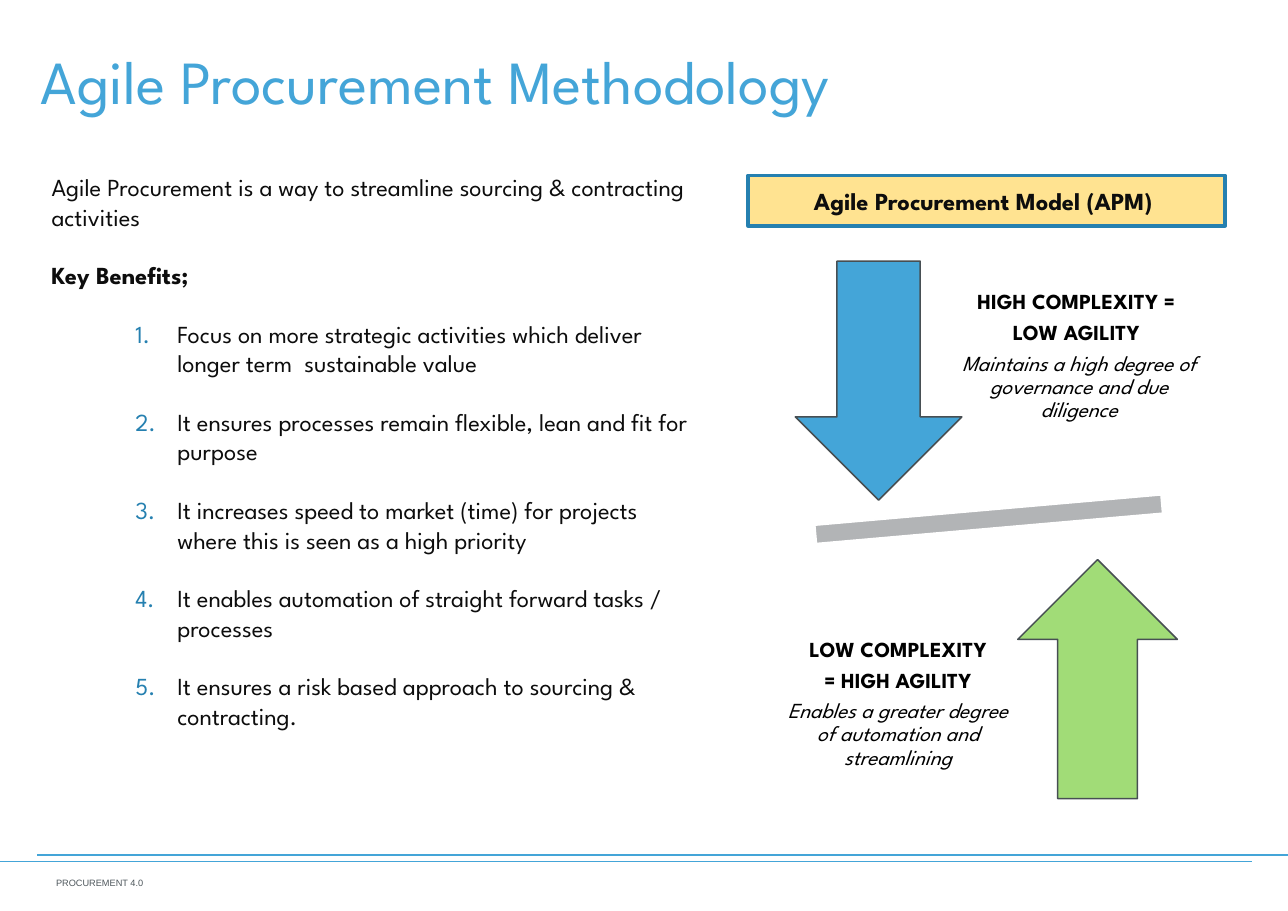
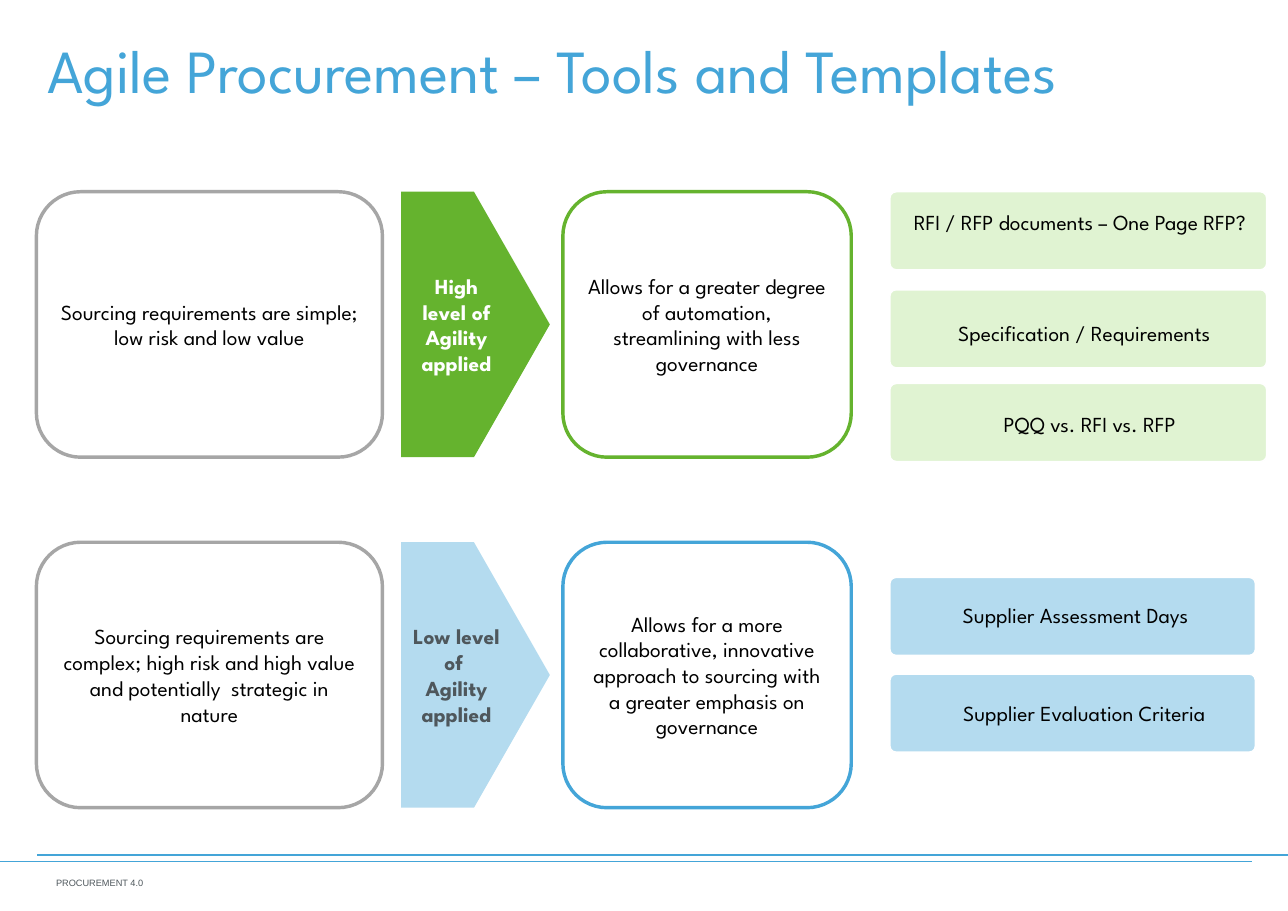
"""Build two slides on agile procurement: the model, and its tools and templates."""
from lxml.etree import SubElement
from pptx import Presentation
from pptx.dml.color import RGBColor
from pptx.enum.shapes import MSO_CONNECTOR, MSO_SHAPE as Kind
from pptx.enum.text import MSO_ANCHOR as Anchor, PP_ALIGN as Align
from pptx.oxml.ns import qn
from pptx.util import Cm, Pt

FONT = "League Spartan"
WHITE = RGBColor(0xFF, 0xFF, 0xFF)
BLACK = RGBColor(0x00, 0x00, 0x00)
INK = RGBColor(0x0D, 0x0D, 0x0D)
SLATE = RGBColor(0x4E, 0x57, 0x5C)
EDGE = RGBColor(0x47, 0x4F, 0x53)
GREY = RGBColor(0xA6, 0xA6, 0xA6)
SILVER = RGBColor(0xB2, 0xB4, 0xB6)
BLUE = RGBColor(0x44, 0xA5, 0xD8)
NAVY = RGBColor(0x25, 0x80, 0xB0)
SKY = RGBColor(0xB4, 0xDB, 0xEF)
GREEN = RGBColor(0x65, 0xB3, 0x2E)
LIME = RGBColor(0xA1, 0xDC, 0x77)
MINT = RGBColor(0xE0, 0xF3, 0xD2)
YELLOW = RGBColor(0xFF, 0xE3, 0x91)


def draw(slide, kind, box, fill=None, line=None, width=1, inset=(0.25, 0.13), anchor=Anchor.MIDDLE):
    """Add a shape, or a text box when kind is None, at box in centimetres."""
    place = [Cm(n) for n in box]
    if kind is None:
        shape = slide.shapes.add_textbox(*place)
    else:
        shape = slide.shapes.add_shape(kind, *place)
        shape.shadow.inherit = False
        if fill is None:
            shape.fill.background()
        else:
            shape.fill.solid()
            shape.fill.fore_color.rgb = fill
        if line is None:
            shape.line.fill.background()
        else:
            shape.line.color.rgb = line
            shape.line.width = Pt(width)
    frame = shape.text_frame
    frame.word_wrap = True
    frame.vertical_anchor = anchor
    frame.margin_left = frame.margin_right = Cm(inset[0])
    frame.margin_top = frame.margin_bottom = Cm(inset[1])
    return shape


def say(shape, text, size=14, color=BLACK, bold=False, italic=False, font=FONT,
        align=Align.CENTER, before=0, after=0, lead=None, number=False):
    """Add one paragraph to a shape."""
    frame = shape.text_frame
    para = frame.add_paragraph() if frame.text else frame.paragraphs[0]
    para.alignment = align
    para.space_before, para.space_after = Pt(before), Pt(after)
    if lead:
        para.line_spacing = lead
    if number:
        props = para._p.get_or_add_pPr()
        props.set("marL", str(Cm(2.9)))
        props.set("indent", str(-Cm(0.97)))
        tint = SubElement(props, qn("a:buClr"))
        SubElement(tint, qn("a:srgbClr")).set("val", str(NAVY))
        SubElement(props, qn("a:buFont")).set("typeface", FONT)
        SubElement(props, qn("a:buAutoNum")).set("type", "arabicPeriod")
    run = para.add_run()
    run.text = text
    run.font.name, run.font.size = font, Pt(size)
    run.font.bold, run.font.italic = bold, italic
    run.font.color.rgb = color


deck = Presentation()
deck.slide_width, deck.slide_height = Cm(29.7), Cm(21)

slides = []
for title, box in [
    ("Agile Procurement Methodology", (0.69, 0.86, 28.9, 0.91)),
    ("Agile Procurement – Tools and Templates", (0.84, 0.61, 27.91, 2.03)),
]:
    slide = deck.slides.add_slide(deck.slide_layouts[6])
    slides.append(slide)
    foot = draw(slide, None, (0, 19.91, 3.58, 0.89), inset=(0.28, 0.15))
    say(foot, "PROCUREMENT 4.0", size=6, color=SLATE, font="Arial", align=Align.RIGHT)
    for start, end, y in [(0, 28.86, 19.86), (0.86, 29.7, 19.71)]:
        rule = slide.shapes.add_connector(MSO_CONNECTOR.STRAIGHT, Cm(start), Cm(y), Cm(end), Cm(y))
        rule.line.color.rgb = BLUE
        rule.line.width = Pt(1)
        SubElement(rule._element.spPr, qn("a:effectLst"))
    head = draw(slide, None, box, anchor=Anchor.TOP)
    say(head, title, size=40, color=BLUE, align=Align.LEFT)

model, tools = slides

body = draw(model, None, (0.94, 3.84, 15.21, 15.6), anchor=Anchor.TOP)
style = {"size": 16, "color": INK, "align": Align.LEFT}
say(body, "Agile Procurement is a way to streamline sourcing & contracting activities", **style)
say(body, "Key Benefits;", bold=True, before=19.2, **style)
for gain in [
    "Focus on more strategic activities which deliver longer term  sustainable value",
    "It ensures processes remain flexible, lean and fit for purpose",
    "It increases speed to market (time) for projects where this is seen as a high priority",
    "It enables automation of straight forward tasks / processes",
    "It ensures a risk based approach to sourcing & contracting.",
]:
    say(body, gain, before=19.2, number=True, **style)

beam = draw(model, Kind.MATH_MINUS, (17.35, 11.07, 10.9, 1.8), SILVER, WHITE)
beam.rotation = 355
draw(model, Kind.DOWN_ARROW, (18.34, 6.02, 3.84, 5.51), BLUE, EDGE)
draw(model, Kind.UP_ARROW, (23.47, 12.9, 3.68, 5.51), LIME, EDGE)
for box, heads, detail in [
    ((21.89, 5.33, 5.99, 5.79), ("HIGH COMPLEXITY = ", "LOW AGILITY "),
     "Maintains a high degree of governance and due diligence"),
    ((17.75, 13.34, 5.92, 5.79), ("LOW COMPLEXITY", " = HIGH AGILITY "),
     "Enables a greater degree of automation and streamlining"),
]:
    note = draw(model, None, box, inset=(0.28, 0.28))
    for text in heads:
        say(note, text, bold=True, lead=0.9, after=4.9)
    say(note, detail, italic=True, lead=0.9, after=4.9)
banner = draw(model, Kind.RECTANGLE, (17.25, 4.04, 11, 1.17), YELLOW, NAVY, 2.25, inset=(0, 0))
say(banner, "Agile Procurement Model (APM) ", size=16, color=INK, bold=True)

HIGH = 6.12
for top, need, level, result, fill, ink, edge in [
    (4.42, "Sourcing requirements are simple; low risk and low value",
     ("High level of Agility", "applied"),
     "Allows for a greater degree of automation, streamlining with less governance",
     GREEN, WHITE, GREEN),
    (12.5, "Sourcing requirements are complex; high risk and high value and potentially  strategic in nature",
     ("Low level of ", "Agility", "applied"),
     "Allows for a more collaborative, innovative approach to sourcing with a greater emphasis on governance",
     SKY, SLATE, BLUE),
]:
    arrow = draw(tools, Kind.PENTAGON, (9.25, top, 3.43, HIGH), fill)
    arrow.adjustments[0] = 0.51
    for text in level:
        say(arrow, text, color=ink, bold=True)
    cause = draw(tools, Kind.ROUNDED_RECTANGLE, (0.84, top, 7.98, HIGH), line=GREY, width=2.25)
    say(cause, need)
    effect = draw(tools, Kind.FLOWCHART_ALTERNATE_PROCESS, (12.98, top, 6.65, HIGH), line=edge, width=2.25)
    say(effect, result)

for text, top, width, fill, left, drop, span in [
    ("RFI / RFP documents – One Page RFP?", 4.42, 8.69, MINT, 20.83, 0.41, 8.15),
    ("Specification / Requirements", 6.68, 8.69, MINT, 21.03, 0.69, 7.95),
    ("PQQ vs. RFI vs. RFP", 8.84, 8.69, MINT, 21.03, 0.63, 8.2),
    ("Supplier Assessment Days", 13.31, 8.43, SKY, 20.83, 0.58, 7.95),
    ("Supplier Evaluation Criteria", 15.54, 8.43, SKY, 21.03, 0.59, 7.95),
]:
    card = draw(tools, Kind.ROUNDED_RECTANGLE, (20.52, top, width, 1.8), fill, WHITE)
    card.adjustments[0] = 0.08
    label = draw(tools, None, (left, top + drop, span, 0.8), inset=(0, 0), anchor=Anchor.TOP)
    say(label, text)

deck.save("out.pptx")
